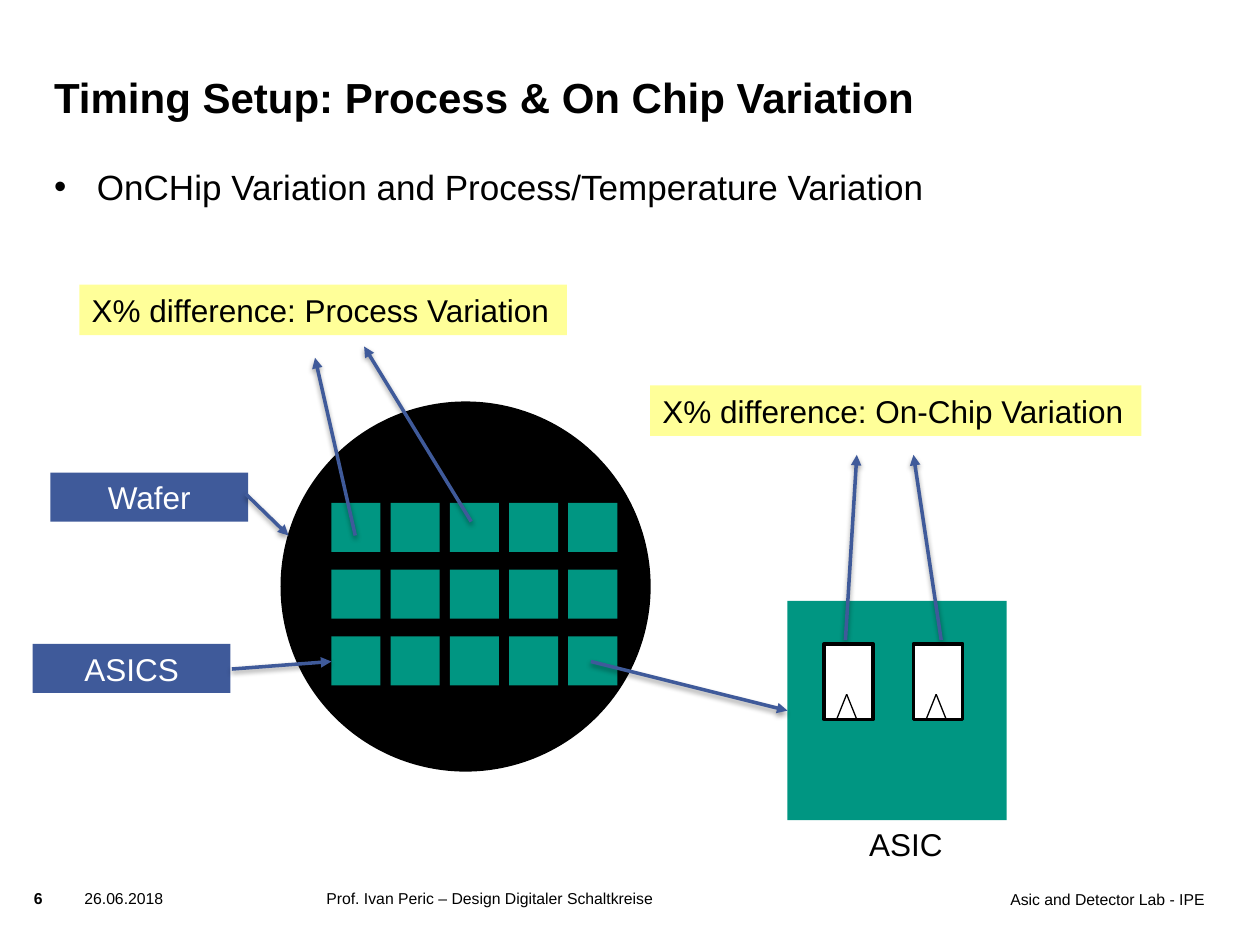
from lxml.etree import SubElement as Sub
from pptx import Presentation
from pptx.dml.color import RGBColor as Rgb
from pptx.enum.shapes import MSO_CONNECTOR as Link, MSO_SHAPE as Geo
from pptx.enum.text import MSO_ANCHOR as Anchor, PP_ALIGN as Align
from pptx.oxml.ns import qn
from pptx.util import Inches, Pt

COLORS = {
    "black": "000000",
    "white": "FFFFFF",
    "blue": "3F5A9A",
    "green": "009682",
    "yellow": "FFFF99",
}


class Deck:
    font = "Arial"

    def __init__(self, wide, high):
        self.prs = Presentation()
        self.prs.slide_width = Inches(wide)
        self.prs.slide_height = Inches(high)
        self.slide = self.prs.slides.add_slide(self.prs.slide_layouts[6])

    def color(self, name):
        return Rgb.from_string(COLORS[name])

    def fill_text(self, shape, text, size, color="black", bold=False, align=Align.LEFT,
                  anchor=Anchor.TOP, inset=True, wrap=True, bullet=False):
        frame = shape.text_frame
        frame.text = text
        frame.word_wrap = wrap
        frame.vertical_anchor = anchor
        if not inset:
            frame.margin_left = frame.margin_right = 0
            frame.margin_top = frame.margin_bottom = 0
        para = frame.paragraphs[0]
        para.alignment = align
        if bullet:
            props = para._p.get_or_add_pPr()
            props.set("marL", str(Inches(0.34)))
            props.set("indent", str(Inches(-0.34)))
            Sub(props, qn("a:buFont"), typeface=self.font)
            Sub(props, qn("a:buChar"), char="•")
        font = para.runs[0].font
        font.name = self.font
        font.size = Pt(size)
        font.bold = bold
        font.color.rgb = self.color(color)

    def text(self, box, text, size, inset=False, **style):
        shape = self.slide.shapes.add_textbox(*map(Inches, box))
        self.fill_text(shape, text, size, inset=inset, **style)

    def shape(self, box, fill, line=None, geo=Geo.RECTANGLE):
        shape = self.slide.shapes.add_shape(geo, *map(Inches, box))
        shape.shadow.inherit = False
        shape.fill.solid()
        shape.fill.fore_color.rgb = self.color(fill)
        if line:
            shape.line.color.rgb = self.color(line)
            shape.line.width = Pt(2)
        else:
            shape.line.fill.background()
        return shape

    def label(self, left, top, text):
        shape = self.shape((left, top, 1.57, 0.39), "blue")
        self.fill_text(shape, text, 18, "white", align=Align.CENTER, anchor=Anchor.MIDDLE)

    def note(self, left, top, width, text):
        shape = self.shape((left, top, width, 0.4), "yellow")
        self.fill_text(shape, text, 18, wrap=False)

    def line(self, start, end, color="black", width=0.75):
        line = self.slide.shapes.add_connector(Link.STRAIGHT, *map(Inches, start + end))
        line.line.color.rgb = self.color(color)
        line.line.width = Pt(width)
        return line, Sub(line._element.spPr, qn("a:effectLst"))

    def arrow(self, start, end):
        line, effects = self.line(start, end, "blue", 2)
        Sub(line.line._get_or_add_ln(), qn("a:tailEnd"), type="triangle")
        shade = Sub(effects, qn("a:outerShdw"), blurRad=str(Pt(3.1)), dist=str(Pt(1.6)),
                    dir="5400000", rotWithShape="0")
        tint = Sub(shade, qn("a:srgbClr"), val=COLORS["black"])
        Sub(tint, qn("a:alpha"), val="38000")

    def flop(self, left, top):
        self.shape((left, top, 0.39, 0.6), "white", "black")
        tip = (left + 0.18, top + 0.4)
        for foot in (0.1, 0.26):
            self.line((left + foot, top + 0.6), tip)


def main():
    deck = Deck(10, 7.5)

    deck.text((6.57, 7.06, 2.99, 0.39), "Asic and Detector Lab - IPE", 9, align=Align.RIGHT)
    deck.text((0.27, 7.05, 0.36, 0.24), "6", 9, bold=True)
    deck.text((0.67, 7.05, 0.94, 0.39), "26.06.2018", 9)
    deck.text((2.59, 7.05, 2.99, 0.39), "Prof. Ivan Peric – Design Digitaler Schaltkreise", 9)
    deck.text((0.43, 0.36, 7.56, 0.61), "Timing Setup: Process & On Chip Variation", 24,
              bold=True, anchor=Anchor.BOTTOM)
    deck.text((0.43, 1.31, 9.14, 0.79),
              "OnCHip Variation and Process/Temperature Variation", 20, bullet=True)

    deck.shape((2.24, 3.2, 2.91, 2.91), "black", "black", Geo.OVAL)
    deck.label(0.4, 3.75, "Wafer")
    deck.arrow((1.95, 3.92), (2.29, 4.25))
    for row in range(3):
        for col in range(5):
            deck.shape((2.63 + 0.47 * col, 3.99 + 0.53 * row, 0.39, 0.39), "green")
    deck.label(0.26, 5.11, "ASICS")
    deck.arrow((1.84, 5.31), (2.63, 5.25))
    deck.arrow((2.82, 4.25), (2.5, 2.84))
    deck.arrow((3.74, 4.14), (2.89, 2.75))
    deck.note(0.63, 2.26, 3.87, "X% difference: Process Variation")

    deck.shape((6.25, 4.77, 1.74, 1.74), "green")
    deck.arrow((4.69, 5.25), (6.25, 5.64))
    for left in (6.54, 7.25):
        deck.flop(left, 5.11)
    deck.text((6.8, 6.5, 0.79, 0.4), "ASIC", 18, inset=True, wrap=False)
    deck.arrow((7.47, 5.08), (7.25, 3.61))
    deck.arrow((6.71, 5.08), (6.8, 3.61))
    deck.note(5.16, 3.06, 3.9, "X% difference: On-Chip Variation")

    deck.prs.save("out.pptx")


if __name__ == "__main__":
    main()
